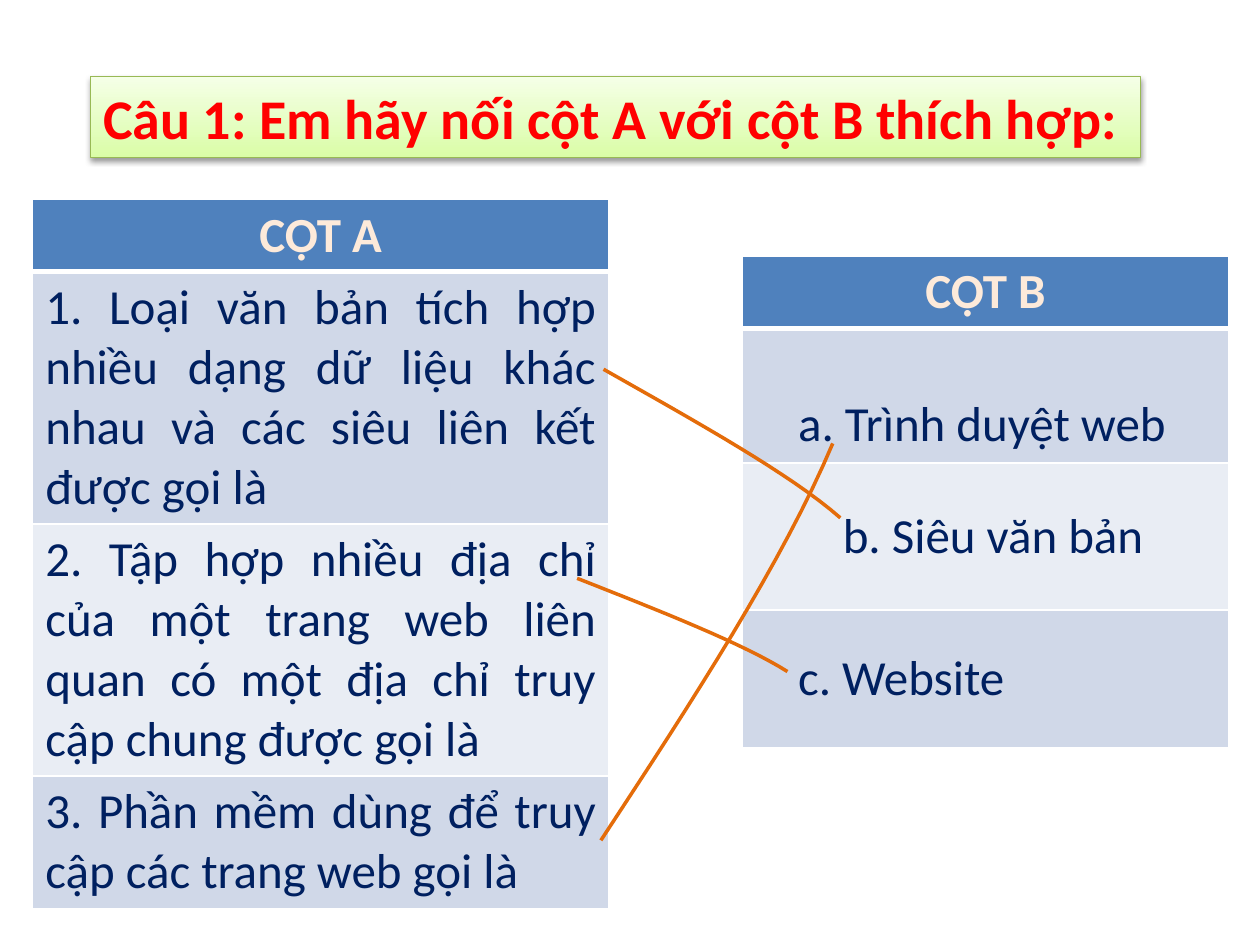
from pptx import Presentation
from pptx import util as u
from pptx.dml import color
from pptx.enum import shapes, text
from pptx.oxml import parse_xml
from pptx.oxml.ns import nsdecls

Pt = u.Pt
ALIGN = text.PP_ALIGN


def rgb(code):
    return color.RGBColor.from_string(code)


class Deck:
    font = "Calibri"
    ink, head, pale = "002060", "4F81BD", "FDEADA"
    bands = ("D0D8E8", "E9EDF4")
    wire = "E46C0A"

    def __init__(self, wide, high):
        self.prs = Presentation()
        self.prs.slide_width, self.prs.slide_height = Pt(wide), Pt(high)
        self.slide = self.prs.slides.add_slide(self.prs.slide_layouts[6])

    def label(self, frame, words, size, tint, bold, align):
        par = frame.paragraphs[0]
        par.text = words
        par.alignment = align
        par.font.name, par.font.size = self.font, Pt(size)
        par.font.bold, par.font.color.rgb = bold, rgb(tint)

    def title(self, words, box):
        shape = self.slide.shapes.add_shape(
            shapes.MSO_SHAPE.RECTANGLE, *map(Pt, box))
        shape.fill.gradient()
        shape.fill.gradient_angle = 90
        for stop, tint in zip(shape.fill.gradient_stops, ("DAFDA7", "F5FFE7")):
            stop.color.rgb = rgb(tint)
        shape.line.color.rgb, shape.line.width = rgb("98B955"), Pt(0.75)
        shape._element.spPr.append(parse_xml(
            f'<a:effectLst {nsdecls("a")}><a:outerShdw blurRad="{Pt(3.1)}" '
            f'dist="{Pt(1.6)}" dir="5400000" rotWithShape="0">'
            '<a:srgbClr val="000000"><a:alpha val="38000"/></a:srgbClr>'
            '</a:outerShdw></a:effectLst>'))
        shape.text_frame.word_wrap = False
        self.label(shape.text_frame, words, 32, "FF0000", True, ALIGN.LEFT)

    def edges(self, cell, top, bottom):
        for side, width in zip("LRTB", (1, 1, top, bottom)):
            cell._tc.get_or_add_tcPr().append(parse_xml(
                f'<a:ln{side} {nsdecls("a")} w="{Pt(width)}"><a:solidFill>'
                f'<a:srgbClr val="FFFFFF"/></a:solidFill></a:ln{side}>'))

    def table(self, left, top, wide, highs, items, anchor=None):
        """Each item is its words, left margin and top margin."""
        grid = self.slide.shapes.add_table(
            len(items), 1, Pt(left), Pt(top), Pt(wide), Pt(sum(highs))).table
        grid.horz_banding = False
        for row, (words, indent, drop) in enumerate(items):
            grid.rows[row].height = Pt(highs[row])
            cell = grid.cell(row, 0)
            first = row == 0
            self.edges(cell, 3 if row == 1 else 1, 3 if first else 1)
            cell.fill.solid()
            cell.fill.fore_color.rgb = rgb(
                self.head if first else self.bands[(row - 1) % 2])
            cell.margin_left, cell.margin_top = Pt(indent), Pt(drop)
            if anchor and not first:
                cell.vertical_anchor = anchor
            self.label(cell.text_frame, words, 28,
                       self.pale if first else self.ink, first,
                       ALIGN.CENTER if first else ALIGN.JUSTIFY)

    def curve(self, a, b, c, d, steps=16):
        """Draw a cubic curve from a to d, pulled by b and c."""
        dots = []
        for i in range(steps + 1):
            t = i / steps
            s = 1 - t
            dots.append([Pt(s**3 * p + 3 * s * s * t * q + 3 * s * t * t * r
                            + t**3 * e) for p, q, r, e in zip(a, b, c, d)])
        pen = self.slide.shapes.build_freeform(*dots[0])
        pen.add_line_segments(dots[1:], close=False)
        shape = pen.convert_to_shape()
        shape.shadow.inherit = False
        shape.fill.background()
        shape.line.color.rgb, shape.line.width = rgb(self.wire), Pt(2)


def main():
    deck = Deck(720, 540)

    # Question
    deck.title("Câu 1: Em hãy nối cột A với cột B thích hợp:",
               (51.8, 43.9, 600, 46.1))

    # Columns to match
    deck.table(18.7, 113.8, 329, (40, 142, 142, 74), [
        ("CỘT A", 7.2, 3.6),
        ("1. Loại văn bản tích hợp nhiều dạng dữ liệu khác nhau "
         "và các siêu liên kết được gọi là", 7.2, 3.6),
        ("2. Tập hợp nhiều địa chỉ của một trang web liên quan "
         "có một địa chỉ truy cập chung được gọi là", 7.2, 3.6),
        ("3. Phần mềm dùng để truy cập các trang web gọi là", 7.2, 3.6),
    ])
    deck.table(424.1, 146.2, 278, (40, 77, 84, 78.5), [
        ("CỘT B", 7.2, 3.6),
        ("a. Trình duyệt web", 32, 37),
        ("b. Siêu văn bản", 57.5, 3.6),
        ("c. Website", 32, 3.6),
    ], text.MSO_ANCHOR.MIDDLE)

    # Answer lines
    deck.curve((344.9, 211), (398.2, 241.2), (451.4, 270.7), (480.2, 295.9))
    deck.curve((329.8, 330.5), (377.3, 349.2), (424.8, 367.9), (450, 383.8))
    deck.curve((343.4, 480.2), (396, 400.3), (447.8, 320.4), (475.9, 253.4))

    deck.prs.save("out.pptx")


if __name__ == "__main__":
    main()
